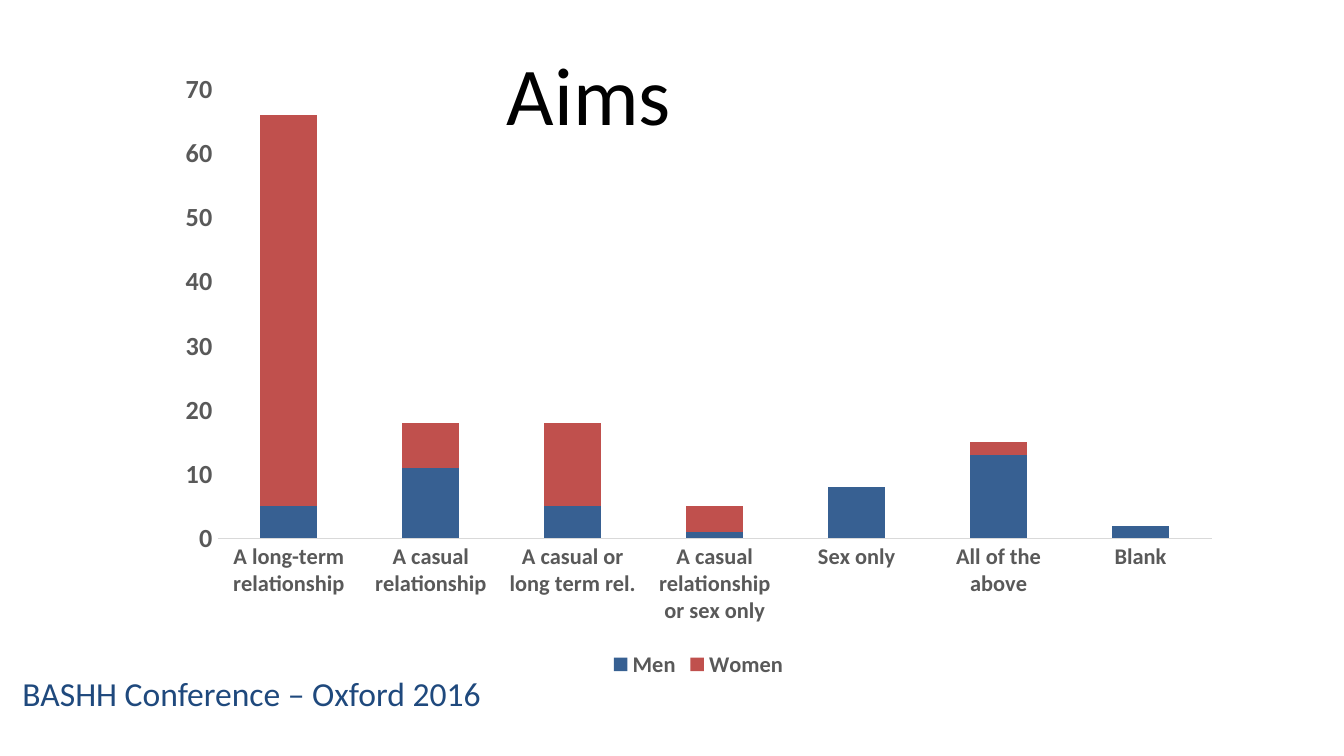
from pptx import Presentation
from pptx.chart.data import CategoryChartData
from pptx.dml.color import RGBColor
from pptx.enum.chart import XL_CHART_TYPE, XL_LEGEND_POSITION, XL_TICK_MARK
from pptx.enum.text import MSO_ANCHOR, PP_ALIGN
from pptx.util import Pt

COLORS = {
    "title": "000000",
    "footer": "1F497D",
    "label": "595959",
    "axis": "D9D9D9",
    "men": "376092",
    "women": "C0504D",
}
AIMS = [
    "A long-term relationship",
    "A casual relationship",
    "A casual or long term rel.",
    "A casual relationship or sex only",
    "Sex only",
    "All of the above",
    "Blank",
]
ANSWERS = {
    "Men": (5, 11, 5, 1, 8, 13, 2),
    "Women": (61, 7, 13, 4, 0, 2, 0),
}


def set_attributes(target, values):
    for name, value in values.items():
        setattr(target, name, value)


class SlideBuilder:
    font_name = "Calibri"

    def __init__(self, slide):
        self.slide = slide

    def color(self, name):
        return RGBColor.from_string(COLORS[name])

    def style_font(self, font, size, color, bold=False):
        set_attributes(font, {"name": self.font_name, "size": Pt(size), "bold": bold})
        font.color.rgb = self.color(color)

    def add_title(self, text, left, top, width, height):
        title = self.slide.shapes.title
        set_attributes(title, {
            "left": Pt(left), "top": Pt(top), "width": Pt(width), "height": Pt(height),
        })
        title.text_frame.text = text
        title.text_frame.vertical_anchor = MSO_ANCHOR.MIDDLE
        paragraph = title.text_frame.paragraphs[0]
        paragraph.alignment = PP_ALIGN.CENTER
        self.style_font(paragraph.font, 44, "title")

    def add_text(self, text, left, top, width, height):
        box = self.slide.shapes.add_textbox(Pt(left), Pt(top), Pt(width), Pt(height))
        box.text_frame.word_wrap = True
        box.text_frame.text = text
        self.style_font(box.text_frame.paragraphs[0].font, 18, "footer")

    def add_stacked_chart(self, categories, answers, left, top, width, height):
        data = CategoryChartData()
        data.categories = categories
        for name, values in answers.items():
            data.add_series(name, values)
        chart = self.slide.shapes.add_chart(
            XL_CHART_TYPE.COLUMN_STACKED,
            Pt(left), Pt(top), Pt(width), Pt(height), data,
        ).chart
        set_attributes(chart, {"has_title": False, "has_legend": True})
        self.style_font(chart.font, 10, "title")
        set_attributes(chart.legend, {
            "position": XL_LEGEND_POSITION.BOTTOM, "include_in_layout": False,
        })
        self.style_font(chart.legend.font, 12, "label", bold=True)

        for axis, size in ((chart.category_axis, 12), (chart.value_axis, 14)):
            set_attributes(axis, {
                "has_major_gridlines": False,
                "major_tick_mark": XL_TICK_MARK.NONE,
                "minor_tick_mark": XL_TICK_MARK.NONE,
            })
            self.style_font(axis.tick_labels.font, size, "label", bold=True)
        category_line = chart.category_axis.format.line
        category_line.width = Pt(0.75)
        category_line.color.rgb = self.color("axis")
        chart.value_axis.format.line.fill.background()

        plot = chart.plots[0]
        set_attributes(plot, {"gap_width": 150, "overlap": 100, "vary_by_categories": False})
        for series in plot.series:
            series.format.fill.solid()
            series.format.fill.fore_color.rgb = self.color(series.name.lower())


def main():
    presentation = Presentation()
    set_attributes(presentation, {"slide_width": Pt(720), "slide_height": Pt(405)})
    slide = presentation.slides.add_slide(presentation.slide_layouts[5])
    builder = SlideBuilder(slide)
    builder.add_text("BASHH Conference – Oxford 2016", 5, 357, 344, 50)
    builder.add_title("Aims", -8.5, 16, 648, 67.5)
    builder.add_stacked_chart(AIMS, ANSWERS, 88, 32.5, 572.5, 333.5)
    presentation.save("out.pptx")


if __name__ == "__main__":
    main()
